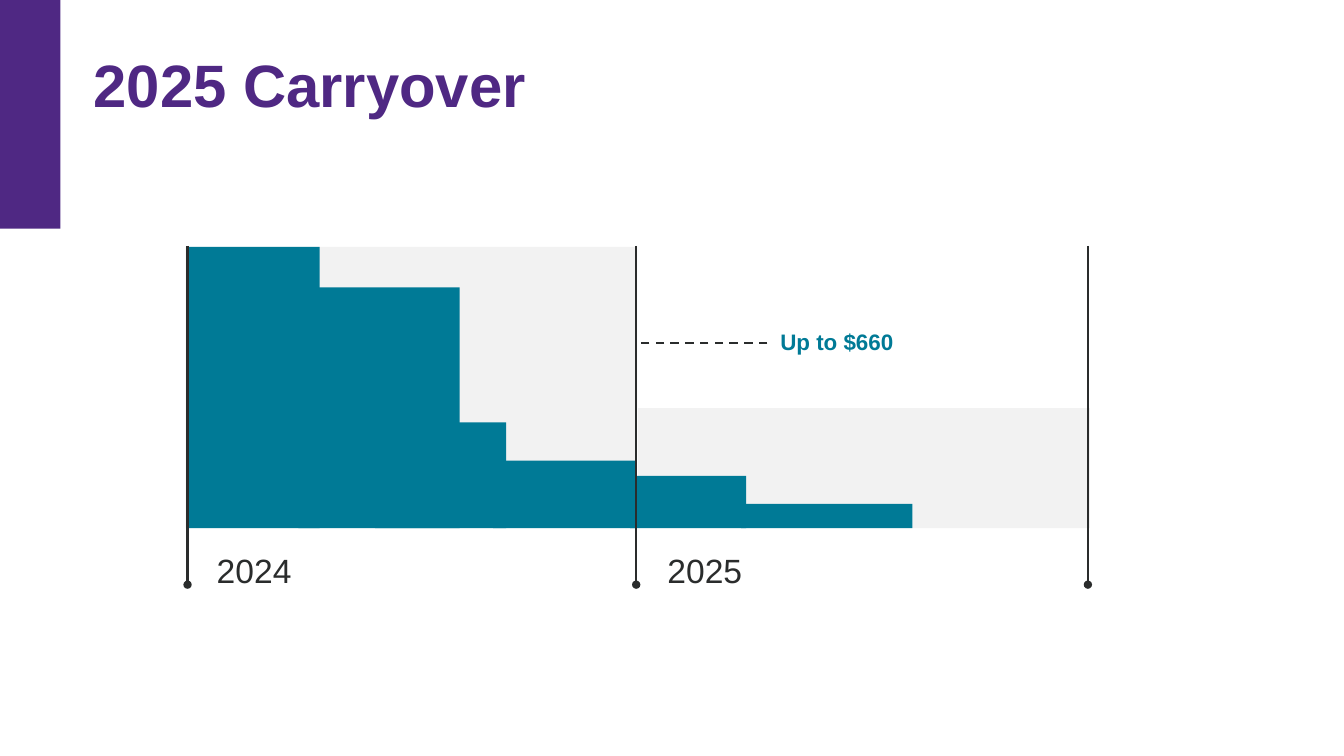
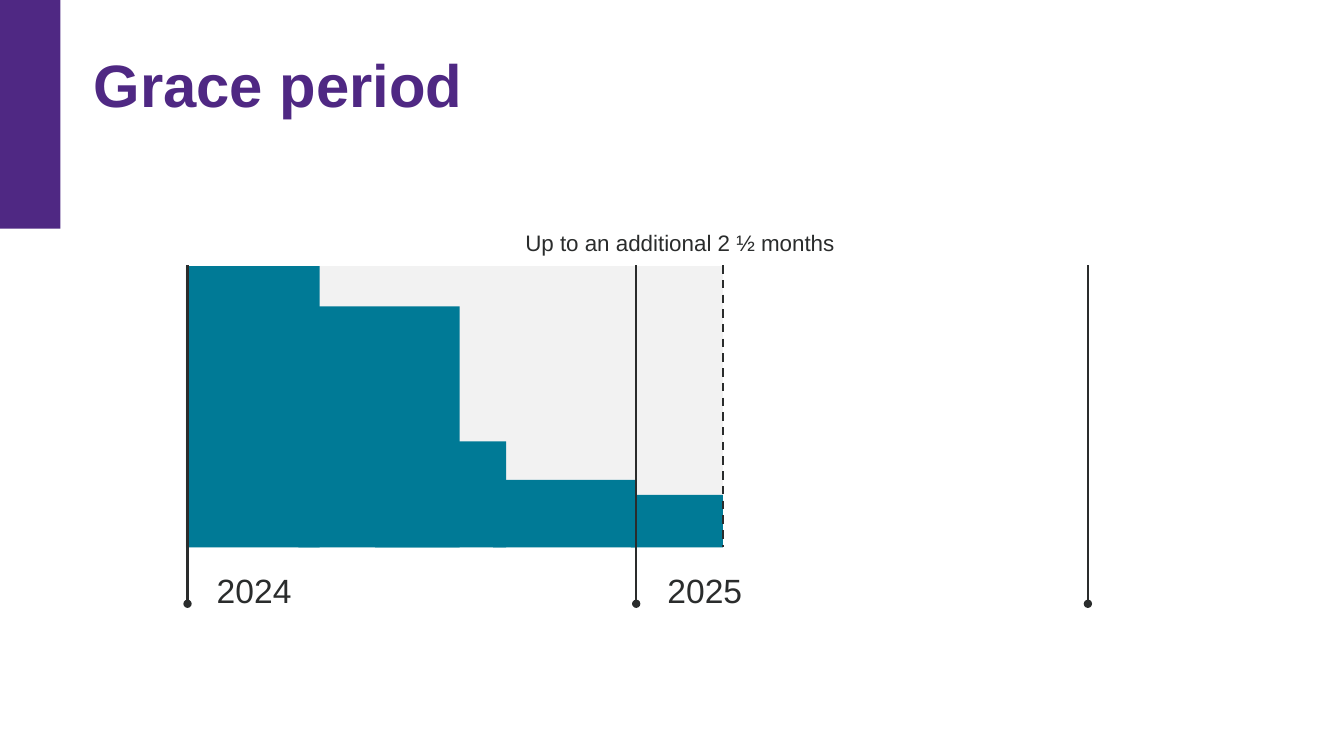
"""Build two slides that compare the 2025 carryover with the grace period."""
from lxml.etree import SubElement
from pptx import Presentation
from pptx.dml.color import RGBColor
from pptx.enum.dml import MSO_LINE
from pptx.enum.shapes import MSO_CONNECTOR, MSO_SHAPE
from pptx.oxml.ns import qn
from pptx.util import Inches, Pt

PURPLE, TEAL, GREY, INK = "4F2883", "007A96", "F2F2F2", "2A2C2C"
FONT = "Arial"
CHART_HEIGHT = 2.79
YEAR_STARTS = (1.86, 6.31, 10.79)
BALANCE_2024 = [
    (1.84, 4.48, CHART_HEIGHT, GREY),
    (1.87, 1.3, CHART_HEIGHT, TEAL),
    (2.96, 1.6, 2.39, TEAL),
    (3.72, 1.3, 1.05, TEAL),
    (4.89, 1.42, 0.67, TEAL),
]
SLIDES = [
    {
        "title": "2025 Carryover",
        "top": 2.45,
        "balance_2025": [
            (6.33, 4.48, 1.19, GREY),
            (6.25, 1.15, 0.52, TEAL),
            (7.35, 1.7, 0.24, TEAL),
        ],
        "dash": (7.61, 3.4, 6.31, 3.4),
        "note": ("Up to $660", 7.61, 3.13, TEAL, True),
    },
    {
        "title": "Grace period",
        "top": 2.64,
        "balance_2025": [
            (6.31, 0.86, CHART_HEIGHT, GREY),
            (6.26, 0.91, 0.52, TEAL),
        ],
        "dash": (7.17, 2.63, 7.17, 5.43),
        "note": ("Up to an additional 2 ½ months", 5.08, 2.14, INK, False),
    },
]


def add_block(slide, left, top, width, height, color):
    block = slide.shapes.add_shape(
        MSO_SHAPE.RECTANGLE, Inches(left), Inches(top), Inches(width), Inches(height))
    block.shadow.inherit = False
    block.fill.solid()
    block.fill.fore_color.rgb = RGBColor.from_string(color)
    block.line.fill.background()


def add_label(slide, text, left, top, width, height, size, color, bold=False, inset=0.13):
    frame = slide.shapes.add_textbox(
        Inches(left), Inches(top), Inches(width), Inches(height)).text_frame
    frame.word_wrap = True
    frame.margin_left = frame.margin_right = Inches(inset)
    frame.margin_top = frame.margin_bottom = Inches(inset)
    paragraph = frame.paragraphs[0]
    paragraph.text = text
    paragraph.font.name = FONT
    paragraph.font.size = Pt(size)
    paragraph.font.bold = bold
    paragraph.font.color.rgb = RGBColor.from_string(color)
    return paragraph


prs = Presentation()
prs.slide_width, prs.slide_height = Inches(13.33), Inches(7.5)

for content in SLIDES:
    slide = prs.slides.add_slide(prs.slide_layouts[6])
    top = content["top"]
    base = top + CHART_HEIGHT

    add_block(slide, 0, 0, 0.6, 2.27, PURPLE)
    title = add_label(slide, content["title"], 0.93, 0.4, 11.85, 0.74, 42.7, PURPLE, True, 0)
    title.line_spacing = 1.1

    for left, width, height, color in BALANCE_2024 + content["balance_2025"]:
        add_block(slide, left, base - height, width, height, color)

    year_lines = [(x, top - 0.01, x, top + 3.35) for x in YEAR_STARTS]
    for ends in year_lines + [content["dash"]]:
        rule = slide.shapes.add_connector(MSO_CONNECTOR.STRAIGHT, *map(Inches, ends))
        rule.line.color.rgb = RGBColor.from_string(INK)
        rule.line.width = Pt(1.5)
        if ends in year_lines:
            SubElement(rule.line._get_or_add_ln(), qn("a:tailEnd"), type="oval")
        else:
            rule.line.dash_style = MSO_LINE.DASH
        SubElement(rule._element.spPr, qn("a:effectLst"))

    for year, left in (("2024", 2.02), ("2025", 6.49)):
        add_label(slide, year, left, base + 0.09, 4, 0.67, 24, INK)
    note, left, note_top, color, bold = content["note"]
    add_label(slide, note, left, note_top, 3.42, 0.54, 16, color, bold)

prs.save("out.pptx")
